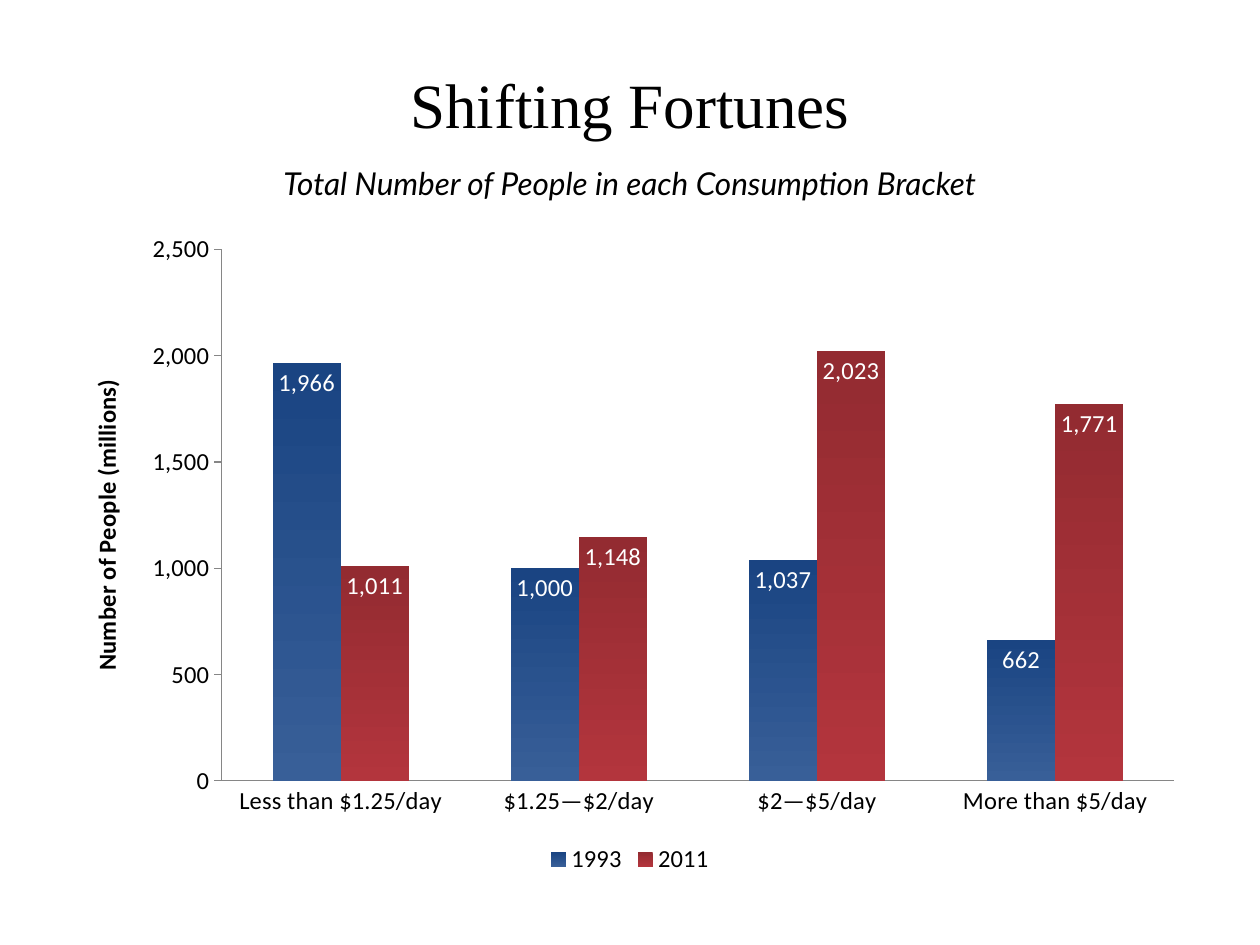
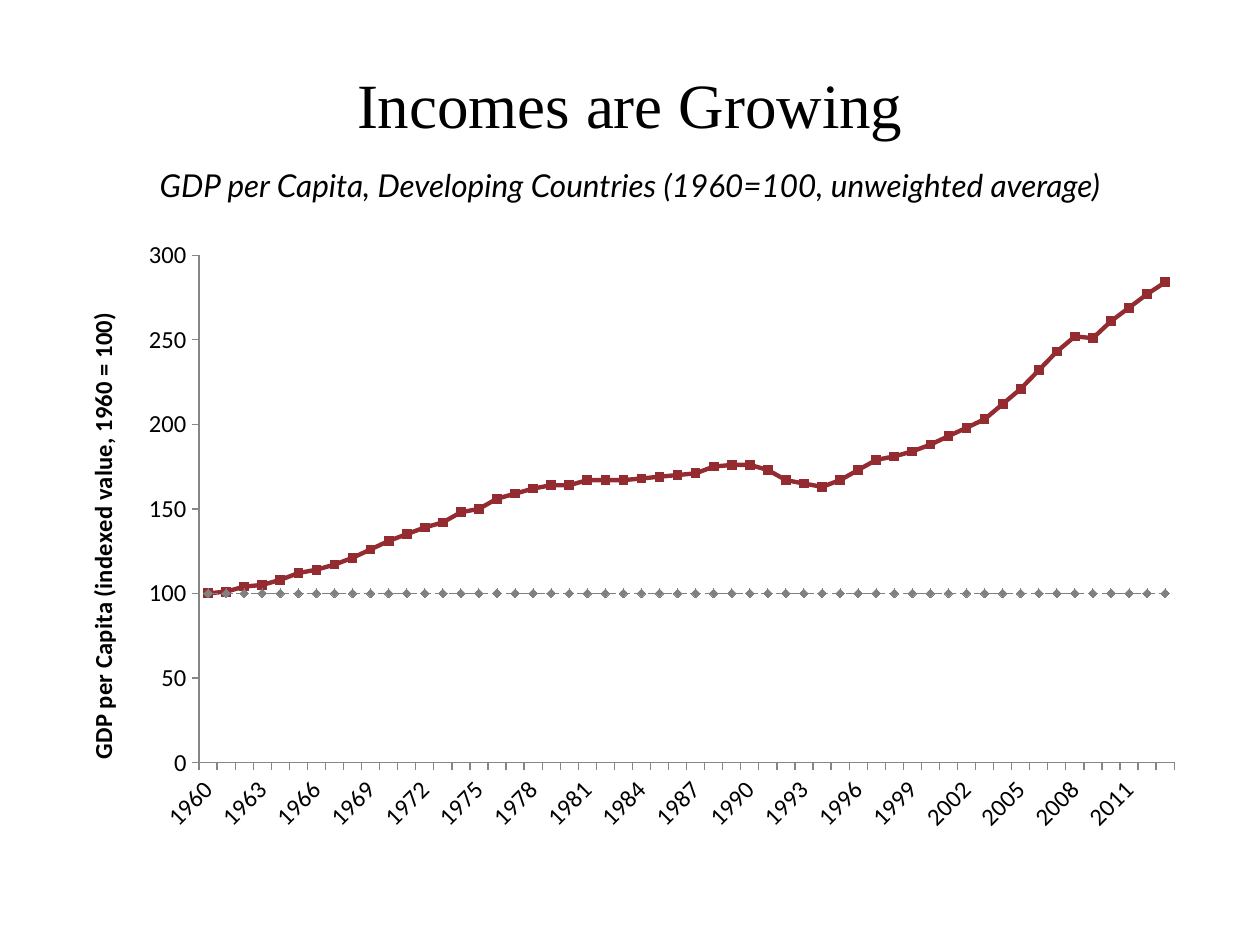
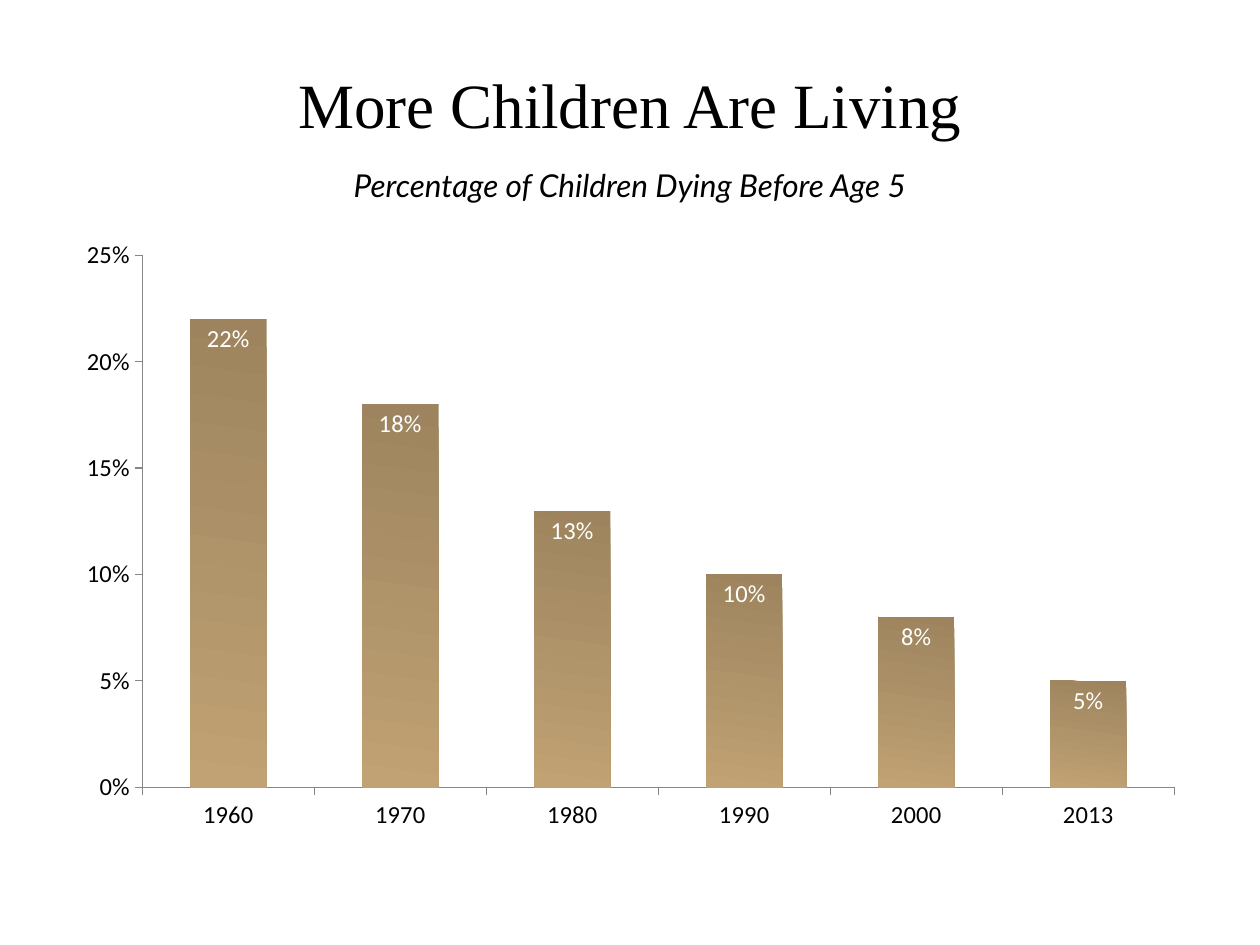
from dataclasses import dataclass

from lxml.etree import SubElement
from pptx import Presentation
from pptx.chart.data import CategoryChartData
from pptx.dml.color import RGBColor
from pptx.enum.chart import XL_CHART_TYPE, XL_LABEL_POSITION, XL_LEGEND_POSITION, XL_TICK_MARK
from pptx.enum.dml import MSO_LINE
from pptx.enum.text import MSO_ANCHOR, MSO_AUTO_SIZE, PP_ALIGN
from pptx.oxml import parse_xml
from pptx.oxml.ns import nsdecls, qn
from pptx.util import Pt


@dataclass(frozen=True)
class Theme:
    black: str = "000000"
    white: str = "FFFFFF"
    axis: str = "868686"
    baseline: str = "808080"
    red: str = "932B31"
    blue_fade: tuple = ("1A4482", "385F98")
    red_fade: tuple = ("932B31", "B3353D")
    tan_fade: tuple = ("9D845E", "C0A274")
    title_font: str = "Times New Roman"
    subtitle_font: str = "Lato"
    chart_font: str = "Calibri"
    title_size: int = 36
    subtitle_size: int = 18
    chart_size: int = 14
    left: int = 36
    width: int = 648


def style_font(font, name, size, color, bold=False, italic=False):
    font.name, font.size = name, Pt(size)
    font.bold, font.italic = bold, italic
    font.color.rgb = RGBColor.from_string(color)


def write_text(text_frame, text, align=PP_ALIGN.CENTER, anchor=MSO_ANCHOR.TOP, **font_format):
    """Put one unbulleted paragraph in a text frame."""
    text_frame.word_wrap = True
    text_frame.auto_size = MSO_AUTO_SIZE.NONE
    text_frame.vertical_anchor = anchor
    paragraph = text_frame.paragraphs[0]
    paragraph.text = text
    paragraph.alignment = align
    paragraph.space_before = Pt(0)
    properties = paragraph._p.get_or_add_pPr()
    properties.set("marL", "0")
    properties.set("indent", "0")
    SubElement(properties, qn("a:buNone"))
    style_font(paragraph.runs[0].font, **font_format)


class Deck:
    """Holds the theme, the presentation and the current slide."""

    def __init__(self, theme):
        self.theme = theme
        self.presentation = Presentation()
        self.presentation.slide_width = Pt(720)
        self.presentation.slide_height = Pt(540)
        self.slide = None

    def place(self, shape, top, height):
        shape.left, shape.width = Pt(self.theme.left), Pt(self.theme.width)
        shape.top, shape.height = Pt(top), Pt(height)

    def add_slide(self, title, subtitle, subtitle_top=91.5):
        theme = self.theme
        self.slide = self.presentation.slides.add_slide(self.presentation.slide_layouts[1])
        heading, body = self.slide.placeholders
        self.place(heading, 21.6, 75)
        write_text(heading.text_frame, title, anchor=MSO_ANCHOR.MIDDLE, name=theme.title_font,
                   size=theme.title_size, color=theme.black)
        self.place(body, subtitle_top, 37.5)
        write_text(body.text_frame, subtitle, name=theme.subtitle_font,
                   size=theme.subtitle_size, color=theme.black, italic=True)

    def add_chart(self, kind, categories, series, plot_area, top=128.2, height=353.5):
        theme = self.theme
        data = CategoryChartData()
        data.categories = categories
        for name, values in series.items():
            data.add_series(name, values)
        chart = self.slide.shapes.add_chart(
            kind, Pt(theme.left), Pt(top), Pt(theme.width), Pt(height), data).chart
        chart.has_title = chart.has_legend = False
        style_font(chart.font, theme.chart_font, theme.chart_size, theme.black)
        chart.plots[0].vary_by_categories = False
        self.set_plot_area(chart, plot_area)
        return chart

    def set_plot_area(self, chart, fractions):
        """Fix the inner plot area as fractions of the chart."""
        entries = "".join(f'<c:{tag} val="{value}"/>' for tag, value in zip("xywh", fractions))
        area = chart._chartSpace.chart.plotArea
        for layout in area.findall(qn("c:layout")):
            area.remove(layout)
        area.insert(0, parse_xml(
            f'<c:layout {nsdecls("c")}><c:manualLayout><c:layoutTarget val="inner"/>'
            f'<c:xMode val="edge"/><c:yMode val="edge"/>{entries}</c:manualLayout></c:layout>'))

    def format_axes(self, chart, maximum, step, number_format,
                    title=None, category_tick=XL_TICK_MARK.OUTSIDE):
        theme = self.theme
        value_axis, category_axis = chart.value_axis, chart.category_axis
        for axis, tick in ((value_axis, XL_TICK_MARK.OUTSIDE), (category_axis, category_tick)):
            axis.has_major_gridlines = False
            axis.major_tick_mark, axis.minor_tick_mark = tick, XL_TICK_MARK.NONE
            axis.format.line.width = Pt(0.75)
            axis.format.line.color.rgb = RGBColor.from_string(theme.axis)
            style_font(axis.tick_labels.font, theme.chart_font, theme.chart_size, theme.black)
        value_axis.minimum_scale, value_axis.maximum_scale = 0, maximum
        value_axis.major_unit = step
        value_axis.tick_labels.number_format = number_format
        value_axis.tick_labels.number_format_is_linked = False
        if title:
            paragraph = value_axis.axis_title.text_frame.paragraphs[0]
            paragraph.text = title
            style_font(paragraph.runs[0].font, theme.chart_font, theme.chart_size,
                       theme.black, bold=True)

    def slant_labels(self, axis, skip):
        """Turn the category labels 45 degrees and show every skip-th one."""
        element = axis._element
        element.find(qn("c:txPr")).find(qn("a:bodyPr")).set("rot", "-2700000")
        element.find(qn("c:noMultiLvlLbl")).addprevious(
            parse_xml(f'<c:tickLblSkip {nsdecls("c")} val="{skip}"/>'))

    def format_columns(self, chart, fades, angle, gap, number_format):
        theme = self.theme
        plot = chart.plots[0]
        plot.gap_width, plot.overlap = gap, 0
        for series, fade in zip(plot.series, fades):
            fill = series.format.fill
            fill.gradient()
            fill.gradient_angle = 360 - angle
            for stop, color in zip(fill.gradient_stops, fade):
                stop.color.rgb = RGBColor.from_string(color)
            labels = series.data_labels
            labels.show_value = True
            labels.position = XL_LABEL_POSITION.INSIDE_END
            labels.number_format, labels.number_format_is_linked = number_format, False
            style_font(labels.font, theme.chart_font, theme.chart_size, theme.white)

    def format_line(self, series, color, width, dash=MSO_LINE.SOLID):
        series.smooth = False
        series.marker.style = None
        series.format.line.width = Pt(width)
        series.format.line.color.rgb = RGBColor.from_string(color)
        series.format.line.dash_style = dash

    def add_legend(self, chart):
        chart.has_legend = True
        chart.legend.position = XL_LEGEND_POSITION.BOTTOM
        chart.legend.include_in_layout = False
        style_font(chart.legend.font, self.theme.chart_font, self.theme.chart_size,
                   self.theme.black)


def add_consumption_slide(deck):
    deck.add_slide("Shifting Fortunes", "Total Number of People in each Consumption Bracket",
                   subtitle_top=90)
    brackets = ["Less than $1.25/day", "$1.25—$2/day", "$2—$5/day", "More than $5/day"]
    people = {"1993": [1966, 1000, 1037, 662], "2011": [1011, 1148, 2023, 1771]}
    chart = deck.add_chart(XL_CHART_TYPE.COLUMN_CLUSTERED, brackets, people,
                           (0.14, 0.04, 0.84, 0.81), top=127.5, height=375)
    deck.format_axes(chart, 2500, 500, "#,##0", title="Number of People (millions)",
                     category_tick=XL_TICK_MARK.NONE)
    deck.format_columns(chart, (deck.theme.blue_fade, deck.theme.red_fade), 90, 150, "#,##0")
    deck.add_legend(chart)


def add_income_slide(deck):
    deck.add_slide("Incomes are Growing",
                   "GDP per Capita, Developing Countries (1960=100, unweighted average)")
    years = [str(year) for year in range(1960, 2014)]
    income = [
        100, 101, 104, 105, 108, 112, 114, 117, 121, 126,
        131, 135, 139, 142, 148, 150, 156, 159, 162, 164,
        164, 167, 167, 167, 168, 169, 170, 171, 175, 176,
        176, 173, 167, 165, 163, 167, 173, 179, 181, 184,
        188, 193, 198, 203, 212, 221, 232, 243, 252, 251,
        261, 269, 277, 284]
    lines = {"Series 1": income, "Series 2": [100] * len(years)}
    chart = deck.add_chart(XL_CHART_TYPE.LINE, years, lines, (0.12, 0.05, 0.86, 0.82))
    deck.format_axes(chart, 300, 50, "0", title="GDP per Capita (indexed value, 1960 = 100)")
    deck.slant_labels(chart.category_axis, 3)
    income_line, baseline = chart.plots[0].series
    deck.format_line(income_line, deck.theme.red, 2.5)
    deck.format_line(baseline, deck.theme.baseline, 0.75, MSO_LINE.LONG_DASH)


def add_children_slide(deck):
    deck.add_slide("More Children Are Living", "Percentage of Children Dying Before Age 5")
    years = ["1960", "1970", "1980", "1990", "2000", "2013"]
    mortality = {"Series 1": [0.22, 0.18, 0.13, 0.1, 0.08, 0.05]}
    chart = deck.add_chart(XL_CHART_TYPE.COLUMN_CLUSTERED, years, mortality,
                           (0.07, 0.05, 0.91, 0.86))
    deck.format_axes(chart, 0.25, 0.05, "0%")
    deck.format_columns(chart, (deck.theme.tan_fade,), 98, 125, "0%")


def main():
    deck = Deck(Theme())
    add_consumption_slide(deck)
    add_income_slide(deck)
    add_children_slide(deck)
    deck.presentation.save("out.pptx")


if __name__ == "__main__":
    main()
